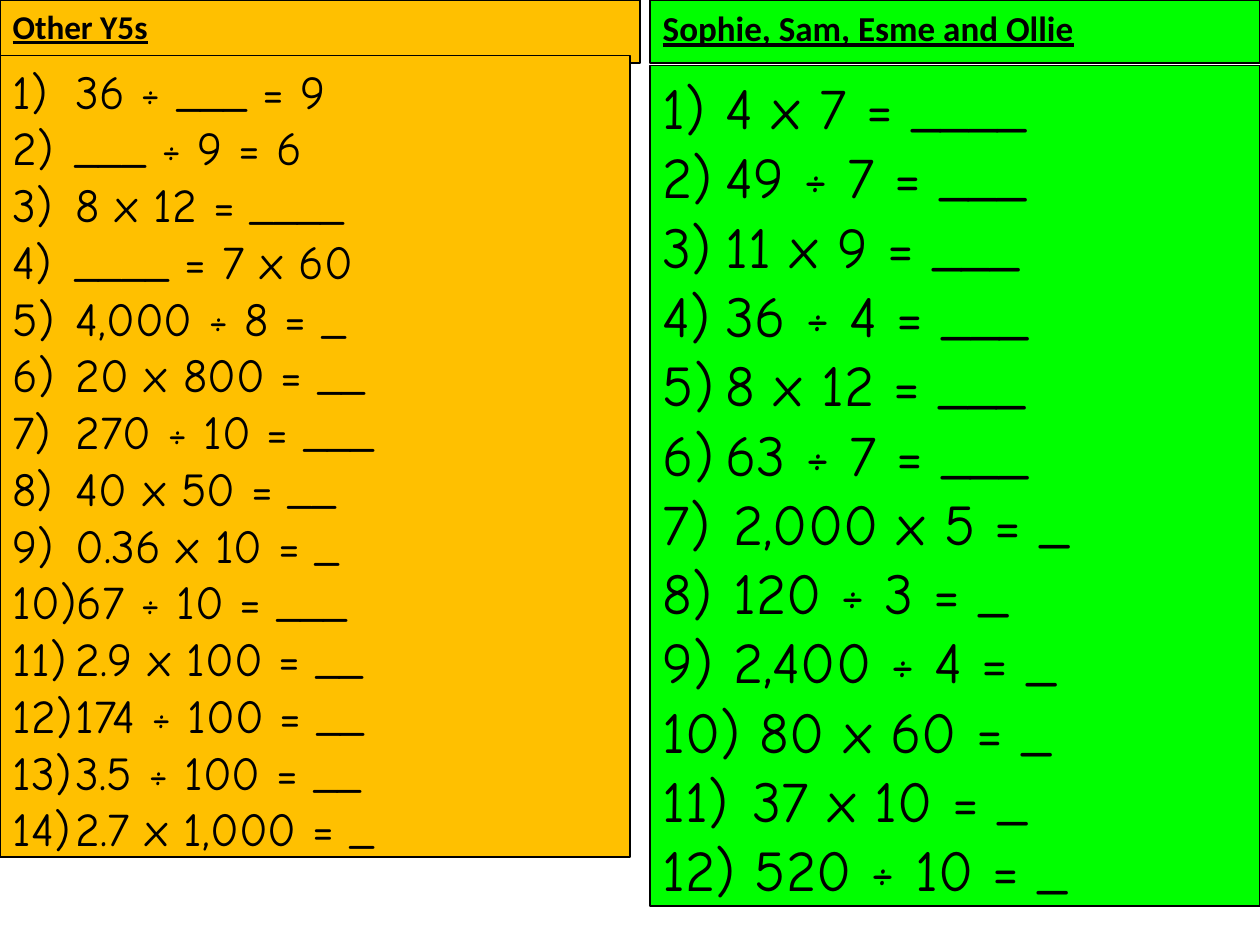
from pptx import Presentation
from pptx.dml.color import RGBColor
from pptx.enum.text import MSO_ANCHOR, MSO_AUTO_SIZE, PP_ALIGN
from pptx.oxml.xmlchemy import OxmlElement
from pptx.util import Inches, Pt

COLORS = {"orange": "FFC000", "green": "00FF00", "black": "000000"}

# Each group of questions: hanging indent in inches, first number, questions
OTHER_Y5S = [
    (0.5, 1, ["36 ÷ ___ = 9", "___ ÷ 9 = 6", "8 x 12 = ____", "____ = 7 x 60",
              "4,000 ÷ 8 = _", "20 x 800 = __", "270 ÷ 10 = ___",
              "40 x 50 = __", "0.36 x 10 = _", "67 ÷ 10 = ___",
              "2.9 x 100 = __", "174 ÷ 100 = __", "3.5 ÷ 100 = __",
              "2.7 x 1,000 = _"]),
]
NAMED_GROUP = [
    (0.5, 1, ["4 x 7 = ____", "49 ÷ 7 = ___", "11 x 9 = ___", "36 ÷ 4 = ___",
              "8 x 12 = ___", "63 ÷ 7 = ___"]),
    (0.56, 7, ["2,000 x 5 = _", "120 ÷ 3 = _", "2,400 ÷ 4 = _",
               " 80 x 60 = _", " 37 x 10 = _", " 520 ÷ 10 = _"]),
]


def color(name):
    return RGBColor.from_string(COLORS[name])


def place_panel(sp, box, fill):
    """Fit a placeholder to its box, fill and outline it; return its text frame."""
    for name, value in zip(("left", "top", "width", "height"), box):
        setattr(sp, name, Inches(value))
    sp.fill.solid()
    sp.fill.fore_color.rgb = color(fill)
    sp.line.color.rgb = color("black")
    sp.line.width = Pt(1)
    tf = sp.text_frame
    settings = {"word_wrap": True, "vertical_anchor": MSO_ANCHOR.TOP,
                "auto_size": MSO_AUTO_SIZE.SHAPE_TO_FIT_TEXT}
    for name, value in settings.items():
        setattr(tf, name, value)
    return tf


def write(p, text, **font):
    p.alignment = PP_ALIGN.LEFT
    p.space_before = Pt(0)
    r = p.add_run()
    r.text = text
    r.font.color.rgb = color("black")
    for name, value in font.items():
        setattr(r.font, name, value)


def number(p, indent, start, font):
    """Number a paragraph as 1), 2), ... with a hanging indent."""
    pPr = p._p.get_or_add_pPr()
    pPr.set("marL", str(Inches(indent)))
    pPr.set("indent", str(-Inches(indent)))
    bu_font = OxmlElement("a:buFont")
    bu_font.set("typeface", font)
    bu_num = OxmlElement("a:buAutoNum")
    bu_num.set("type", "arabicParenR")
    if start > 1:
        bu_num.set("startAt", str(start))
    pPr.extend([bu_font, bu_num])


def add_heading(sp, box, fill, text, size):
    tf = place_panel(sp, box, fill)
    write(tf.paragraphs[0], text, name="Calibri", size=Pt(size),
          bold=True, underline=True)


def add_questions(sp, box, fill, groups, size):
    tf = place_panel(sp, box, fill)
    p = tf.paragraphs[0]
    for indent, start, questions in groups:
        for question in questions:
            if p is None:
                p = tf.add_paragraph()
            write(p, question, name="Comic Neue", size=Pt(size))
            number(p, indent, start, "Comic Neue")
            p = None


def main():
    prs = Presentation()
    prs.slide_width, prs.slide_height = Inches(10), Inches(7.5)
    s = prs.slides.add_slide(prs.slide_layouts[4])  # Comparison
    title = s.shapes.title._element
    title.getparent().remove(title)
    ph = {sp.placeholder_format.idx: sp for sp in s.placeholders}

    # Left column
    add_heading(ph[1], (0, 0, 5.08, 0.42), "orange", "Other Y5s", 19)
    add_questions(ph[2], (0, 0.44, 5, 6.46), "orange", OTHER_Y5S, 27)

    # Right column
    add_heading(ph[3], (5.16, 0, 4.84, 0.44), "green",
                "Sophie, Sam, Esme and Ollie", 20)
    add_questions(ph[4], (5.16, 0.52, 4.84, 6.77), "green", NAMED_GROUP, 33)

    prs.save("out.pptx")


if __name__ == "__main__":
    main()
